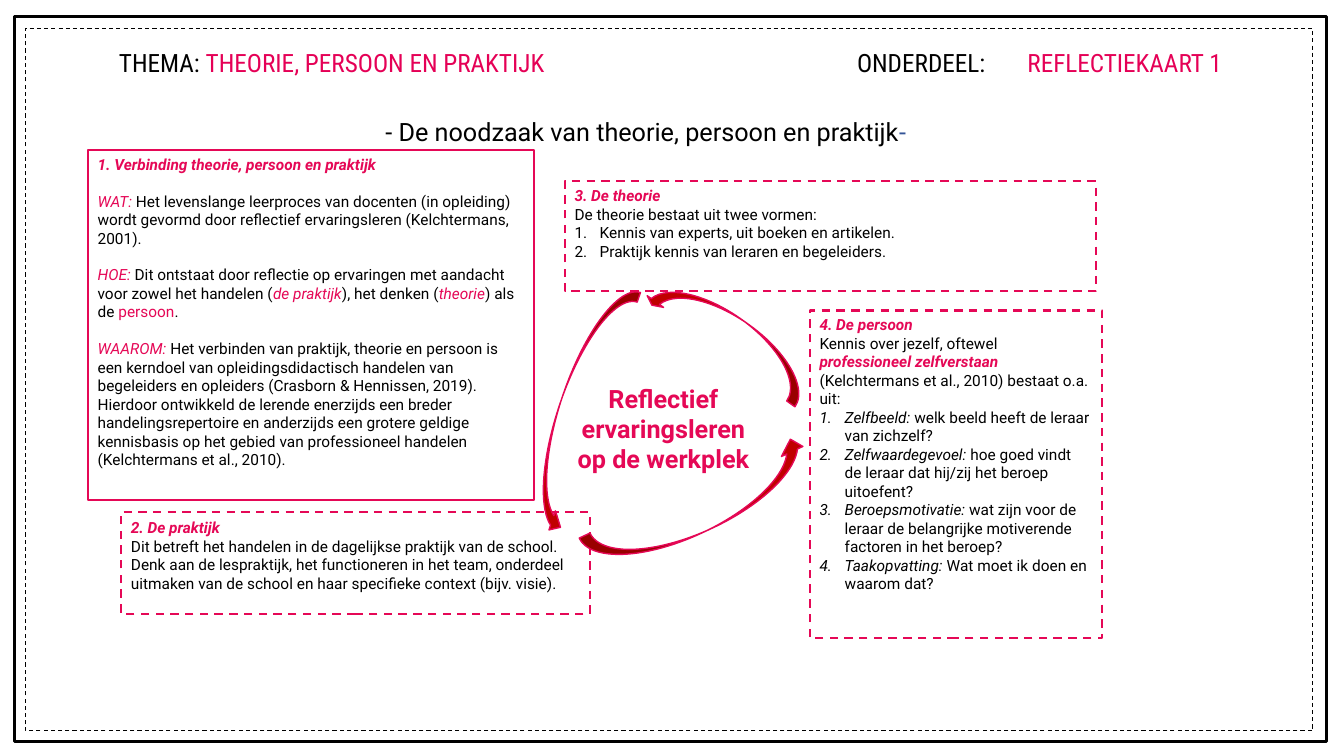
import pptx
import pptx.dml.color
import pptx.enum.dml
import pptx.enum.shapes
import pptx.enum.text
import pptx.oxml.ns
import pptx.util
from lxml import etree

THEME = {
    "body_font": "Roboto", "header_font": "Roboto Condensed",
    "body_size": 11, "large_size": 18, "tab_size": 20,
    "black": "000000", "white": "FFFFFF", "header_pink": "E50056",
    "pink": "E50856", "blue": "335497", "red": "C00000",
}
# Run styles: colour, bold, italic
STYLES = {
    "plain": ("black", False, False),
    "term": ("black", False, True),
    "accent": ("pink", False, False),
    "key": ("pink", False, True),
    "heading": ("pink", True, True),
    "strong": ("pink", True, False),
    "header": ("header_pink", False, False),
    "dash": ("blue", False, False),
}
CELL = pptx.util.Inches(0.1)  # columns and rows are a tenth of an inch
ALIGN = pptx.enum.text.PP_ALIGN
SHAPE = pptx.enum.shapes.MSO_SHAPE


def write(frame, runs, size="body_size", font="body_font", align=ALIGN.LEFT,
          spacing=1.0, before=0, numbered=False, tabs=()):
    """Add one paragraph made of (text, style) runs."""
    frame.word_wrap = True
    frame.vertical_anchor = pptx.enum.text.MSO_ANCHOR.TOP
    first = frame.paragraphs[0]
    paragraph = frame.add_paragraph() if first.runs else first
    properties = paragraph._p.get_or_add_pPr()
    if numbered:
        indent = int(CELL * 2.5)
        properties.set("marL", str(indent))
        properties.set("indent", str(-indent))
        etree.SubElement(properties, pptx.oxml.ns.qn("a:buAutoNum"), type="arabicPeriod")
    if tabs:
        tab_list = etree.SubElement(properties, pptx.oxml.ns.qn("a:tabLst"))
        for column in tabs:
            etree.SubElement(tab_list, pptx.oxml.ns.qn("a:tab"),
                             pos=str(int(CELL * column)), algn="l")
    paragraph.alignment = align
    paragraph.line_spacing = spacing
    paragraph.space_before = pptx.util.Pt(before)
    for text, style in runs:
        run = paragraph.add_run()
        run.text = text
        color, run.font.bold, run.font.italic = STYLES[style]
        run.font.color.rgb = pptx.dml.color.RGBColor.from_string(THEME[color])
        is_tab = text == "\t"
        run.font.name = THEME["body_font" if is_tab else font]
        run.font.size = pptx.util.Pt(THEME["tab_size" if is_tab else size])


def draw(kind, place, line="pink", width=1.5, fill=None, dashed=False):
    """Add a preset shape at (column, row, columns, rows)."""
    shape = slide.shapes.add_shape(kind, *[int(CELL * cells) for cells in place])
    shape.shadow.inherit = False
    shape.line.color.rgb = pptx.dml.color.RGBColor.from_string(THEME[line])
    shape.line.width = pptx.util.Pt(width)
    if dashed:
        shape.line.dash_style = pptx.enum.dml.MSO_LINE.DASH
    if fill:
        shape.fill.solid()
        shape.fill.fore_color.rgb = pptx.dml.color.RGBColor.from_string(THEME[fill])
    else:
        shape.fill.background()
    return shape


presentation = pptx.Presentation()
presentation.slide_width = pptx.util.Inches(13.33)
presentation.slide_height = pptx.util.Inches(7.5)
slide = presentation.slides.add_slide(presentation.slide_layouts[5])

# Header line
title = slide.shapes.title
title.left, title.top, title.width, title.height = [
    int(CELL * cells) for cells in (10.8, 3.6, 114.4, 6.4)]
write(title.text_frame, [
    ("THEMA: ", "plain"), ("THEORIE, PERSOON EN PRAKTIJK", "header"),
    ("\t", "plain"), ("ONDERDEEL:", "plain"),
    ("\t", "plain"), ("REFLECTIEKAART 1", "header"),
], size="large_size", font="header_font", spacing=1.1, tabs=(73.2, 90.1))

# Subtitle
subtitle = slide.shapes.add_textbox(*[int(CELL * cells) for cells in (10.8, 10.6, 107.1, 4.3)])
write(subtitle.text_frame, [
    ("- De noodzaak van theorie, persoon en praktijk", "plain"), ("- ", "dash"),
], size="large_size", align=ALIGN.CENTER, spacing=1.15)

# Double page border
draw(SHAPE.RECTANGLE, (1.4, 1.6, 130.2, 72), line="black", width=2.25)
draw(SHAPE.RECTANGLE, (2.5, 2.8, 127.7, 69.7), line="black", width=0.75, dashed=True)

# Cards: place, dashed outline, heading, paragraphs, numbered items, spacing
cards = [
    dict(place=(8.7, 14.9, 44.3, 34.7), dashed=False, before=13,
         heading="1. Verbinding theorie, persoon en praktijk",
         paragraphs=[
             [("WAT: ", "key"),
              ("Het levenslange leerproces van docenten (in opleiding) wordt gevormd door "
               "reflectief ervaringsleren (Kelchtermans, 2001).", "plain")],
             [("HOE: ", "key"),
              ("Dit ontstaat door reflectie op ervaringen met aandacht voor zowel het "
               "handelen (", "plain"),
              ("de praktijk", "key"), ("), het denken (", "plain"), ("theorie", "key"),
              (") als de ", "plain"), ("persoon", "accent"), (".", "plain")],
             [("WAAROM: ", "key"),
              ("Het verbinden van praktijk, theorie en persoon is een kerndoel van "
               "opleidingsdidactisch handelen van begeleiders en opleiders (Crasborn & "
               "Hennissen, 2019). Hierdoor ontwikkeld de lerende enerzijds een breder "
               "handelingsrepertoire en anderzijds een grotere geldige kennisbasis op het "
               "gebied van professioneel handelen (Kelchtermans et al., 2010).", "plain")],
         ]),
    dict(place=(56, 18, 52.7, 10.9), heading="3. De theorie",
         paragraphs=[[("De theorie bestaat uit twee vormen:", "plain")]],
         items=[
             [("Kennis van experts, uit boeken en artikelen.", "plain")],
             [("Praktijk kennis van leraren en begeleiders.", "plain")],
         ]),
    dict(place=(80.3, 30.8, 29, 32.5), heading="4. De persoon",
         paragraphs=[
             [("Kennis over jezelf, oftewel ", "plain"),
              ("professioneel zelfverstaan ", "heading"),
              ("(Kelchtermans et al., 2010) bestaat o.a. uit:", "plain")],
         ],
         items=[
             [("Zelfbeeld: ", "term"), ("welk beeld heeft de leraar van zichzelf?", "plain")],
             [("Zelfwaardegevoel: ", "term"),
              ("hoe goed vindt de leraar dat hij/zij het beroep uitoefent?", "plain")],
             [("Beroepsmotivatie: ", "term"),
              ("wat zijn voor de leraar de belangrijke motiverende factoren in het "
               "beroep?", "plain")],
             [("Taakopvatting: ", "term"), ("Wat moet ik doen en waarom dat?", "plain")],
         ]),
    dict(place=(12, 50.8, 46.5, 10.1), heading="2. De praktijk", heading_spacing=1.07,
         paragraphs=[
             [("Dit betreft het handelen in de dagelijkse praktijk van de school. Denk aan "
               "de lespraktijk, het functioneren in het team, onderdeel uitmaken van de "
               "school en haar specifieke context (bijv. visie).", "plain")],
         ]),
]
for card in cards:
    box = draw(SHAPE.RECTANGLE, card["place"], fill="white", dashed=card.get("dashed", True))
    write(box.text_frame, [(card["heading"], "heading")],
          spacing=card.get("heading_spacing", 1.0))
    for runs in card["paragraphs"]:
        write(box.text_frame, runs, before=card.get("before", 0))
    for runs in card.get("items", []):
        write(box.text_frame, runs, numbered=True)

# Centre of the cycle
centre = slide.shapes.add_textbox(*[int(CELL * cells) for cells in (55.6, 37.5, 20.4, 10.1)])
write(centre.text_frame, [("Reflectief ervaringsleren op de werkplek", "strong")],
      size="large_size", align=ALIGN.CENTER)

# Cycle arrows: place, rotation, length of the head
for place, rotation, head in [
    ((70.5, 24.2, 4, 18.4), 125.4, 0.124),
    ((55.5, 27.7, 4, 25.6), 18.8, 0.25),
    ((67.1, 38.2, 4.7, 24.3), 244.9, 0.25),
]:
    arrow = draw(SHAPE.CURVED_RIGHT_ARROW, place, width=1, fill="red")
    arrow.rotation = rotation
    arrow.adjustments[2] = head

presentation.save("out.pptx")
